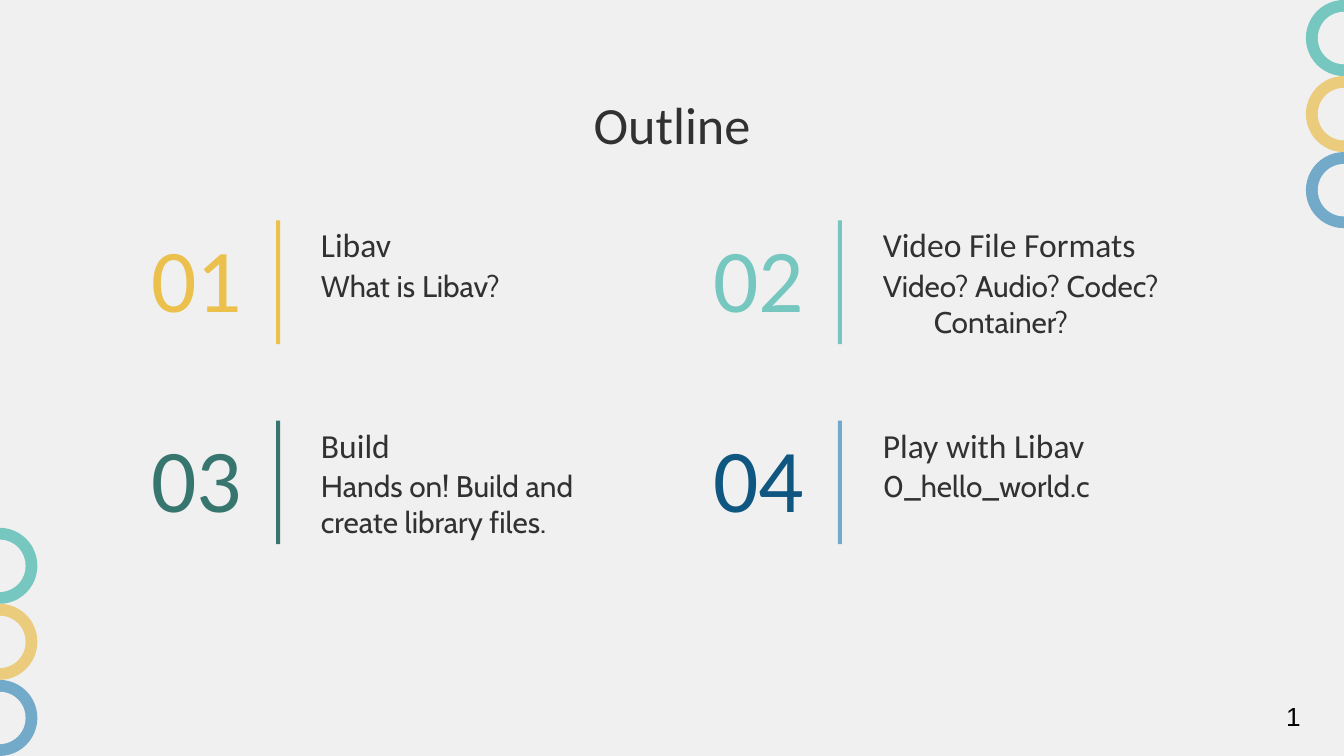
import dataclasses

import pptx
import pptx.dml.color
import pptx.enum.shapes
import pptx.enum.text
import pptx.util

ALIGN = pptx.enum.text.PP_ALIGN
ANCHOR = pptx.enum.text.MSO_ANCHOR
SHAPE = pptx.enum.shapes.MSO_SHAPE


@dataclasses.dataclass(frozen=True)
class Theme:
    """Colours, fonts, type sizes and the grid step in inches."""
    paper: str = "F0F0F0"
    ink: str = "313131"
    black: str = "000000"
    gold: str = "EBC04C"
    sand: str = "EBCC7D"
    aqua: str = "75C7BF"
    pine: str = "37756F"
    sky: str = "73A9C9"
    navy: str = "0F5680"
    heading_font: str = "Calibri"
    body_font: str = "Cabin"
    page_font: str = "Arial"
    title_size: int = 28
    number_size: int = 48
    heading_size: int = 18
    body_size: int = 16
    page_size: int = 14
    step: float = 0.1


class OutlineSlide:
    """Draws the outline on a grid of 100 columns and 56.25 rows."""

    def __init__(self, deck, theme):
        self.theme = theme
        self.page = deck.slides.add_slide(deck.slide_layouts[6])
        self.paint(self.page.background.fill, theme.paper)

    def paint(self, fill, color):
        """Fill with one solid colour."""
        fill.solid()
        fill.fore_color.rgb = pptx.dml.color.RGBColor.from_string(color)

    def area(self, column, row, columns, rows):
        """Turn grid units into slide lengths."""
        return [pptx.util.Inches(units * self.theme.step)
                for units in (column, row, columns, rows)]

    def shape(self, kind, area, color):
        """Add a flat shape without outline."""
        shape = self.page.shapes.add_shape(kind, *self.area(*area))
        shape.shadow.inherit = False
        shape.line.fill.background()
        self.paint(shape.fill, color)

    def text(self, words, area, size, font, color, align=ALIGN.LEFT,
             anchor=ANCHOR.TOP, inset=1, hanging=False, wrap=True):
        """Add a text box in a single style."""
        box = self.page.shapes.add_textbox(*self.area(*area))
        frame = box.text_frame
        frame.text = words
        frame.word_wrap = wrap
        frame.vertical_anchor = anchor
        frame.margin_top = frame.margin_bottom = pptx.util.Inches(inset * self.theme.step)
        frame.margin_left = frame.margin_right = pptx.util.Inches(self.theme.step)
        for para in frame.paragraphs:
            para.alignment = align
            if hanging:
                properties = para._p.get_or_add_pPr()
                properties.set("marL", str(pptx.util.Inches(0.5)))
                properties.set("indent", str(pptx.util.Inches(-0.38)))
            for span in para.runs:
                span.font.size = pptx.util.Pt(size)
                span.font.name = font
                span.font.color.rgb = pptx.dml.color.RGBColor.from_string(color)

    def rings(self, center, top):
        """Stack three touching rings."""
        outer, inner = 5.66, 3.9
        for index, color in enumerate((self.theme.aqua, self.theme.sand, self.theme.sky)):
            middle = top + outer * (index + 0.5)
            for width, shade in ((outer, color), (inner, self.theme.paper)):
                self.shape(SHAPE.OVAL, (center - width / 2, middle - width / 2, width, width), shade)

    def topic(self, column, row, number, heading, body, number_color, bar_color):
        """Add a number, a bar, a heading and its description."""
        theme = self.theme
        self.text(number, (column, row, 10.1, 9.2), theme.number_size, theme.heading_font,
                  number_color, ALIGN.RIGHT, ANCHOR.BOTTOM)
        self.text(heading, (column + 12.8, row - 0.7, 27.6, 3.7), theme.heading_size,
                  theme.heading_font, theme.ink, hanging=True)
        self.text(body, (column + 12.8, row + 2.5, 25, 6.7), theme.body_size,
                  theme.body_font, theme.ink, hanging=True)
        self.shape(SHAPE.RECTANGLE, (column + 11.65, row, 0.3, 9.2), bar_color)


def main():
    """Build and save the outline slide."""
    theme = Theme()
    deck = pptx.Presentation()
    deck.slide_width = pptx.util.Inches(10)
    deck.slide_height = pptx.util.Inches(5.625)
    slide = OutlineSlide(deck, theme)
    slide.rings(100, 0)
    slide.rings(-0.05, 39.27)
    slide.text("Outline", (7.9, 5.9, 84.2, 4), theme.title_size, theme.heading_font,
               theme.ink, ALIGN.CENTER)
    topics = (
        ("Libav", "What is Libav?", theme.gold, theme.gold),
        ("Video File Formats", "Video? Audio? Codec? Container?", theme.aqua, theme.aqua),
        ("Build", "Hands on! Build and\ncreate library files.", theme.pine, theme.pine),
        ("Play with Libav", "0_hello_world.c", theme.navy, theme.sky),
    )
    for index, topic in enumerate(topics):
        row, column = divmod(index, 2)
        slide.topic(8.9 + 41.8 * column, 16.4 + 14.9 * row, f"{index + 1:02}", *topic)
    slide.text("1", (94.7, 51.6, 3.1, 3.4), theme.page_size, theme.page_font,
               theme.black, inset=0.5, wrap=False)
    deck.save("out.pptx")


if __name__ == "__main__":
    main()
